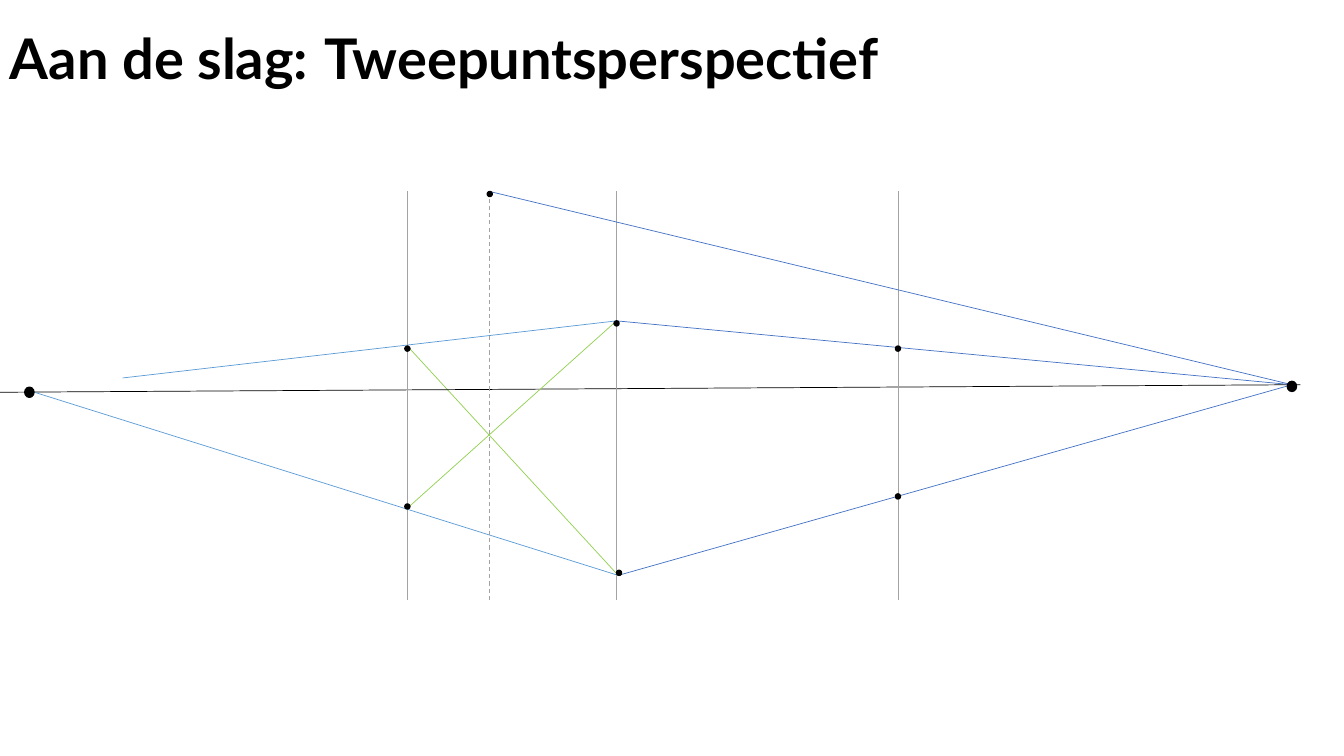
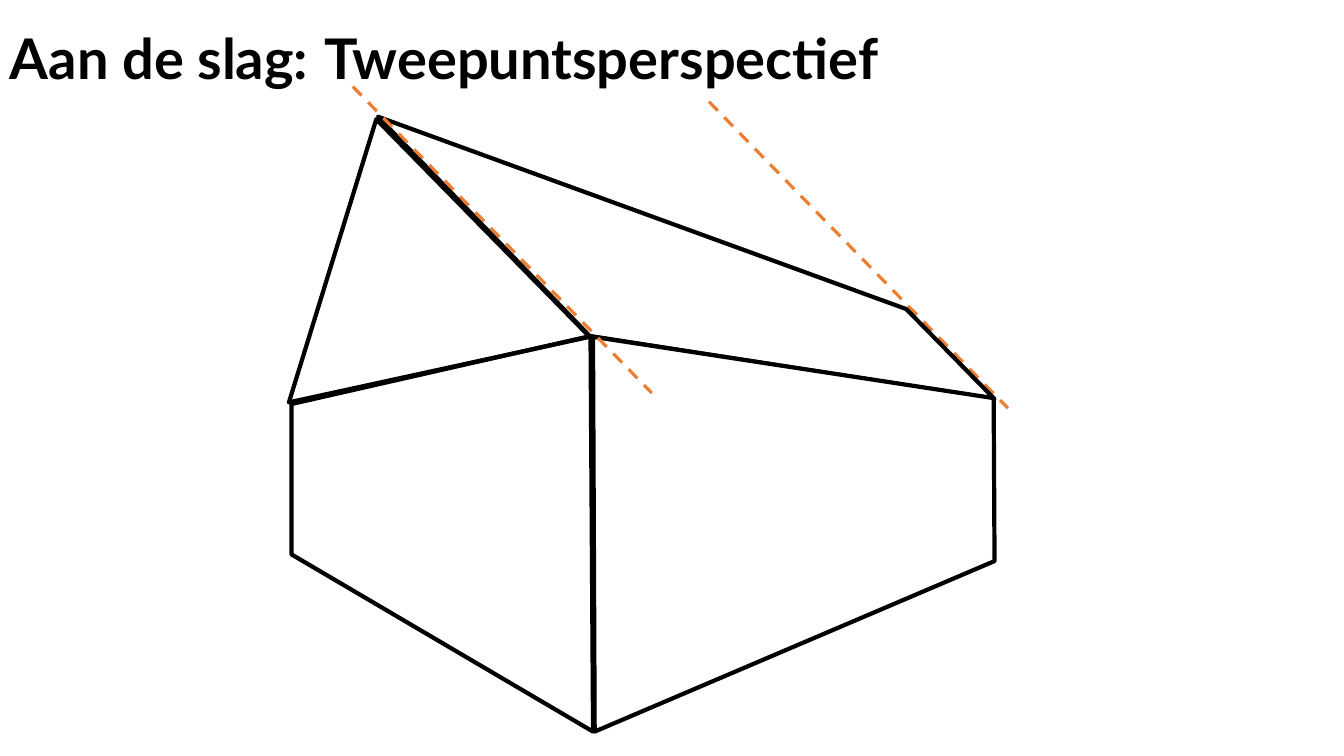
from dataclasses import dataclass

from lxml.etree import SubElement
from pptx import Presentation
from pptx.dml.color import RGBColor
from pptx.enum.dml import MSO_LINE
from pptx.enum.shapes import MSO_CONNECTOR, MSO_SHAPE
from pptx.enum.text import MSO_ANCHOR
from pptx.oxml.ns import qn
from pptx.util import Emu, Inches, Pt

# The slide is a grid of 160 columns by 90 rows; all lengths are in its cells.
COLUMNS = 160
SLIDE_W, SLIDE_H = Inches(13.3333), Inches(7.5)
TITLE = "Aan de slag:\t Tweepuntsperspectief"
FONT = "Lato"
BLACK, WHITE, GREY = "000000", "FFFFFF", "A3A3A3"
BLUE, LIGHT_BLUE, GREEN, ORANGE = "4472C4", "5B9BD5", "92D050", "ED7D31"

Point = tuple[float, float]


@dataclass(frozen=True)
class Line:
    start: Point
    end: Point
    color: str
    width: float = 0.5
    dashed: bool = False


@dataclass(frozen=True)
class Dot:
    center: Point
    width: float = 0.6
    height: float = 0.6


@dataclass(frozen=True)
class Outline:
    corners: tuple[Point, ...]
    fill: str | None = None


def rgb(color: str) -> RGBColor:
    return RGBColor.from_string(color)


def cells(n: float) -> Emu:
    return Emu(round(n * SLIDE_W / COLUMNS))


def style_line(sp, color: str, width: float) -> None:
    sp.line.color.rgb = rgb(color)
    sp.line.width = Pt(width)


def add_titled_slide(prs):
    s = prs.slides.add_slide(prs.slide_layouts[6])
    s.background.fill.solid()
    s.background.fill.fore_color.rgb = rgb(WHITE)
    tf = s.shapes.add_textbox(0, 0, cells(142.9), cells(14.6)).text_frame
    tf.word_wrap = True
    tf.vertical_anchor = MSO_ANCHOR.MIDDLE
    p = tf.paragraphs[0]
    p.text = TITLE
    p.line_spacing = 0.9
    for r in p.runs:
        r.font.name, r.font.size, r.font.bold = FONT, Pt(40), True
        r.font.color.rgb = rgb(BLACK)
    return s


def draw_line(s, line: Line) -> None:
    ends = [cells(n) for n in (*line.start, *line.end)]
    sp = s.shapes.add_connector(MSO_CONNECTOR.STRAIGHT, *ends)
    style_line(sp, line.color, line.width)
    if line.dashed:
        sp.line.dash_style = MSO_LINE.DASH
    SubElement(sp._element.spPr, qn("a:effectLst"))


def draw_dot(s, dot: Dot) -> None:
    x, y = dot.center
    box = (x - dot.width / 2, y - dot.height / 2, dot.width, dot.height)
    sp = s.shapes.add_shape(MSO_SHAPE.OVAL, *map(cells, box))
    sp.shadow.inherit = False
    sp.fill.solid()
    sp.fill.fore_color.rgb = rgb(BLACK)
    style_line(sp, BLACK, 1)


def draw_outline(s, outline: Outline) -> None:
    first, *rest = [(cells(x), cells(y)) for x, y in outline.corners]
    builder = s.shapes.build_freeform(*first)
    builder.add_line_segments(rest, close=True)
    sp = builder.convert_to_shape()
    sp.shadow.inherit = False
    if outline.fill:
        sp.fill.solid()
        sp.fill.fore_color.rgb = rgb(outline.fill)
    else:
        sp.fill.background()
    style_line(sp, BLACK, 3)


def build_construction(prs) -> None:
    """Draw the vanishing points and the construction lines of the house."""
    left_vp, right_vp = (4.1, 46.7), (153.8, 45.8)
    near_top, near_bottom = (73.4, 38.2), (73.6, 68.5)
    left, ridge, near, right = 48.5, 58.3, 73.4, 106.9
    top, bottom = 22.8, 71.4

    lines = [
        Line((left, 41.2), near_bottom, GREEN),
        Line((0, 46.7), (154.8, 45.8), BLACK),
        Line(near_top, (14.6, 45), LIGHT_BLUE),
        Line(left_vp, near_bottom, LIGHT_BLUE),
        *(Line((x, top), (x, bottom), GREY) for x in (left, near, right)),
        *(Line(start, right_vp, BLUE)
          for start in ((ridge, top), near_top, near_bottom)),
        Line((ridge, top), (ridge, bottom), GREY, 0.75, dashed=True),
        Line((left, 60.5), near_top, GREEN),
    ]
    marks = [(near, 38.5), (left, 41.5), (right, 41.5), (ridge, 23.1),
             (left, 60.3), (right, 59.1), (73.7, 68.2)]
    vanishing_points = [(3.5, 46.7), (153.8, 46)]

    s = add_titled_slide(prs)
    for line in lines:
        draw_line(s, line)
    for center in marks:
        draw_dot(s, Dot(center))
    for center in vanishing_points:
        draw_dot(s, Dot(center, 1.1, 1.2))


def build_house(prs) -> None:
    """Draw the finished house with the two parallel roof guides."""
    facade = Outline(((70.3, 40), (34.7, 48.1), (34.7, 66), (70.6, 87.1)), WHITE)
    gable = Outline(((44.8, 14.2), (34.4, 47.9), (70.2, 40.1)))
    roof = Outline(((45, 13.9), (107.9, 36.8), (118.4, 47.5), (70.2, 40)))
    side = Outline(((118.3, 47.4), (118.4, 66.8), (70.8, 87.1), (70.6, 40.1)), WHITE)
    far_guide, near_guide = (
        Line((x, y), (x + 35.6, y + 36.5), ORANGE, 2.25, dashed=True)
        for x, y in ((84.4, 12.1), (42, 10.3)))

    s = add_titled_slide(prs)
    draw_outline(s, facade)
    draw_outline(s, gable)
    draw_line(s, far_guide)
    draw_outline(s, roof)
    draw_outline(s, side)
    draw_line(s, near_guide)


def main() -> None:
    prs = Presentation()
    prs.slide_width, prs.slide_height = SLIDE_W, SLIDE_H
    build_construction(prs)
    build_house(prs)
    prs.save("out.pptx")


if __name__ == "__main__":
    main()
